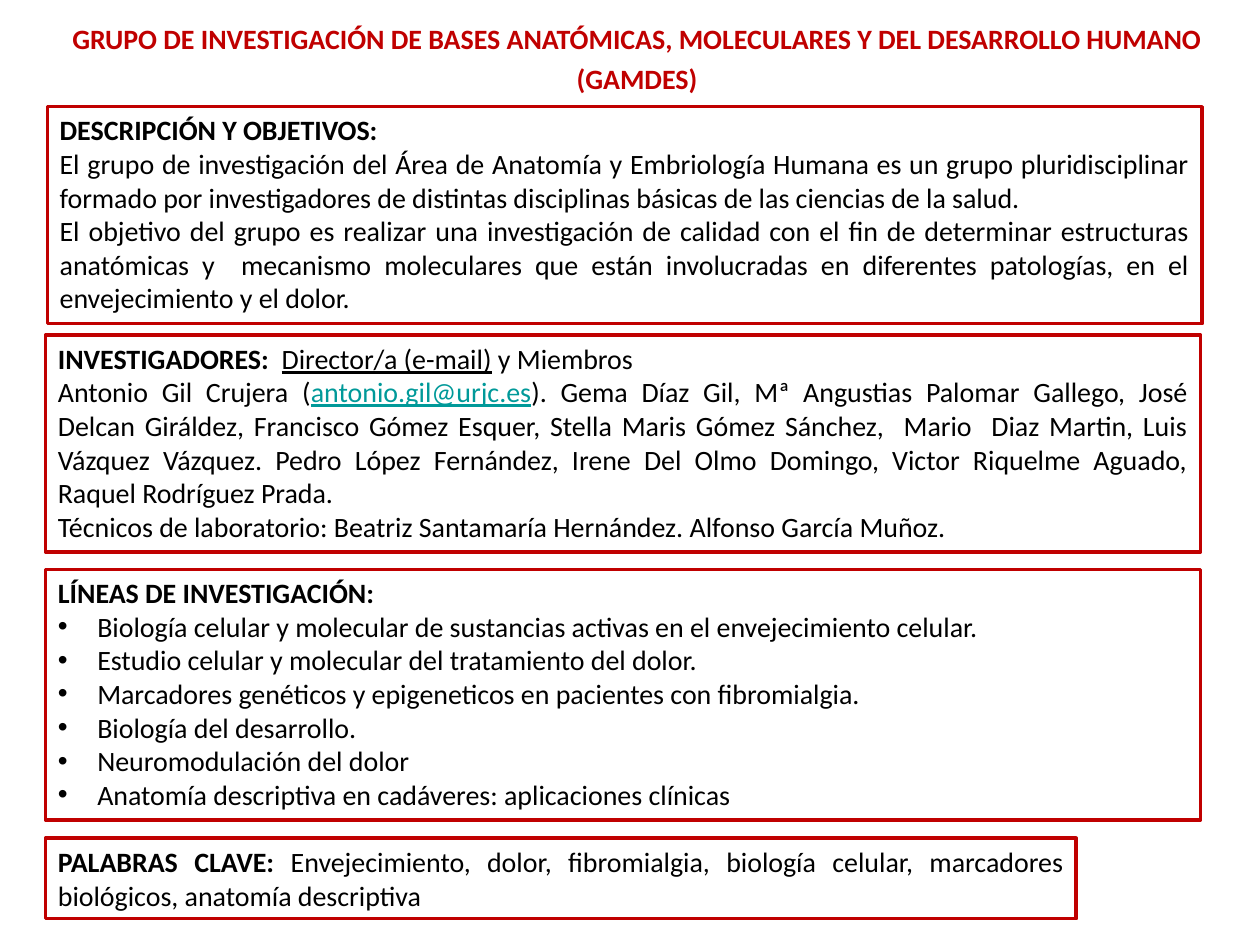
from pptx import Presentation
from pptx.util import Pt
from pptx.dml.color import RGBColor
from pptx.enum.shapes import MSO_SHAPE
from pptx.enum.text import MSO_ANCHOR, PP_ALIGN
from lxml import etree

RED, BLACK, WHITE, TEAL = "C00000", "000000", "FFFFFF", "009999"
LEFT, CENTER, JUSTIFY = PP_ALIGN.LEFT, PP_ALIGN.CENTER, PP_ALIGN.JUSTIFY
BOLD, LINE = {"bold": True}, {"underline": True}
INDENT = Pt(22.5)


def rgb(value):
    return RGBColor.from_string(value)


def write(tf, paras, color=BLACK, gap=0):
    tf.word_wrap = True
    tf.vertical_anchor = MSO_ANCHOR.TOP
    for i, (align, bullet, runs) in enumerate(paras):
        p = tf.paragraphs[0] if i == 0 else tf.add_paragraph()
        p.alignment = align
        if i and gap:
            p.space_before = Pt(gap)
        if bullet:
            pPr = p._p.get_or_add_pPr()
            pPr.set("marL", str(INDENT))
            pPr.set("indent", str(-INDENT))
            ns = pPr.nsmap["a"]
            etree.SubElement(pPr, f"{{{ns}}}buFont").set("typeface", "Arial")
            etree.SubElement(pPr, f"{{{ns}}}buChar").set("char", "•")
        for text, fmt in runs:
            r = p.add_run()
            r.text = text
            values = {"name": "Calibri", "size": Pt(16), "bold": False, "color": color} | fmt
            r.font.color.rgb = rgb(values.pop("color"))
            for key, value in values.items():
                setattr(r.font, key, value)


prs = Presentation()
prs.slide_width, prs.slide_height = Pt(720), Pt(540)
s = prs.slides.add_slide(prs.slide_layouts[6])

title = [
    "GRUPO DE INVESTIGACIÓN DE BASES ANATÓMICAS, MOLECULARES Y DEL DESARROLLO HUMANO",
    "(GAMDES)",
]
tf = s.shapes.add_textbox(Pt(26.5), Pt(9), Pt(675), Pt(45)).text_frame
write(tf, [(CENTER, False, [(text, BOLD)]) for text in title], RED, 3.2)

goals = [
    (LEFT, False, [("DESCRIPCIÓN Y OBJETIVOS:", BOLD)]),
    (JUSTIFY, False, [("El grupo de investigación del Área de Anatomía y Embriología Humana es un grupo pluridisciplinar formado por investigadores de distintas disciplinas básicas de las ciencias de la salud.", {})]),
    (JUSTIFY, False, [("El objetivo del grupo es realizar una investigación de calidad con el fin de determinar estructuras anatómicas y  mecanismo moleculares que están involucradas en diferentes patologías, en el envejecimiento y el dolor.", {})]),
]
members = [
    (LEFT, False, [("INVESTIGADORES:  ", BOLD), ("Director/a (e-mail)", LINE), (" y Miembros", {})]),
    (JUSTIFY, False, [
        ("Antonio Gil Crujera (", {}),
        ("antonio.gil@urjc.es", LINE | {"color": TEAL}),
        ("). Gema Díaz Gil, Mª Angustias Palomar Gallego, José Delcan Giráldez, Francisco Gómez Esquer, Stella Maris Gómez Sánchez,  Mario  Diaz Martin, Luis Vázquez Vázquez. Pedro López Fernández, Irene Del Olmo Domingo, Victor Riquelme Aguado, Raquel Rodríguez Prada.", {}),
    ]),
    (JUSTIFY, False, [("Técnicos de laboratorio: Beatriz Santamaría Hernández. Alfonso García Muñoz.", {})]),
]
topics = [
    "Biología celular y molecular de sustancias activas en el envejecimiento celular.",
    "Estudio celular y molecular del tratamiento del dolor.",
    "Marcadores genéticos y epigeneticos en pacientes con fibromialgia.",
    "Biología del desarrollo.",
    "Neuromodulación del dolor",
    "Anatomía descriptiva en cadáveres: aplicaciones clínicas",
]
lines = [(LEFT, False, [("LÍNEAS DE INVESTIGACIÓN:", BOLD)])]
lines += [(LEFT, True, [(text, {})]) for text in topics]
keywords = [
    (JUSTIFY, False, [
        ("PALABRAS CLAVE: ", BOLD),
        ("Envejecimiento, dolor, fibromialgia, biología celular, marcadores biológicos, anatomía descriptiva", {}),
    ]),
]

boxes = [
    (27, 61, 660, 124, goals),
    (26, 191.5, 660, 124, members),
    (26, 325.5, 660, 143, lines),
    (26, 479, 589, 46, keywords),
]
for x, y, w, h, paras in boxes:
    sp = s.shapes.add_shape(MSO_SHAPE.RECTANGLE, Pt(x), Pt(y), Pt(w), Pt(h))
    sp.shadow.inherit = False
    sp.fill.solid()
    sp.fill.fore_color.rgb = rgb(WHITE)
    sp.line.color.rgb = rgb(RED)
    sp.line.width = Pt(2)
    write(sp.text_frame, paras)

prs.save("out.pptx")
